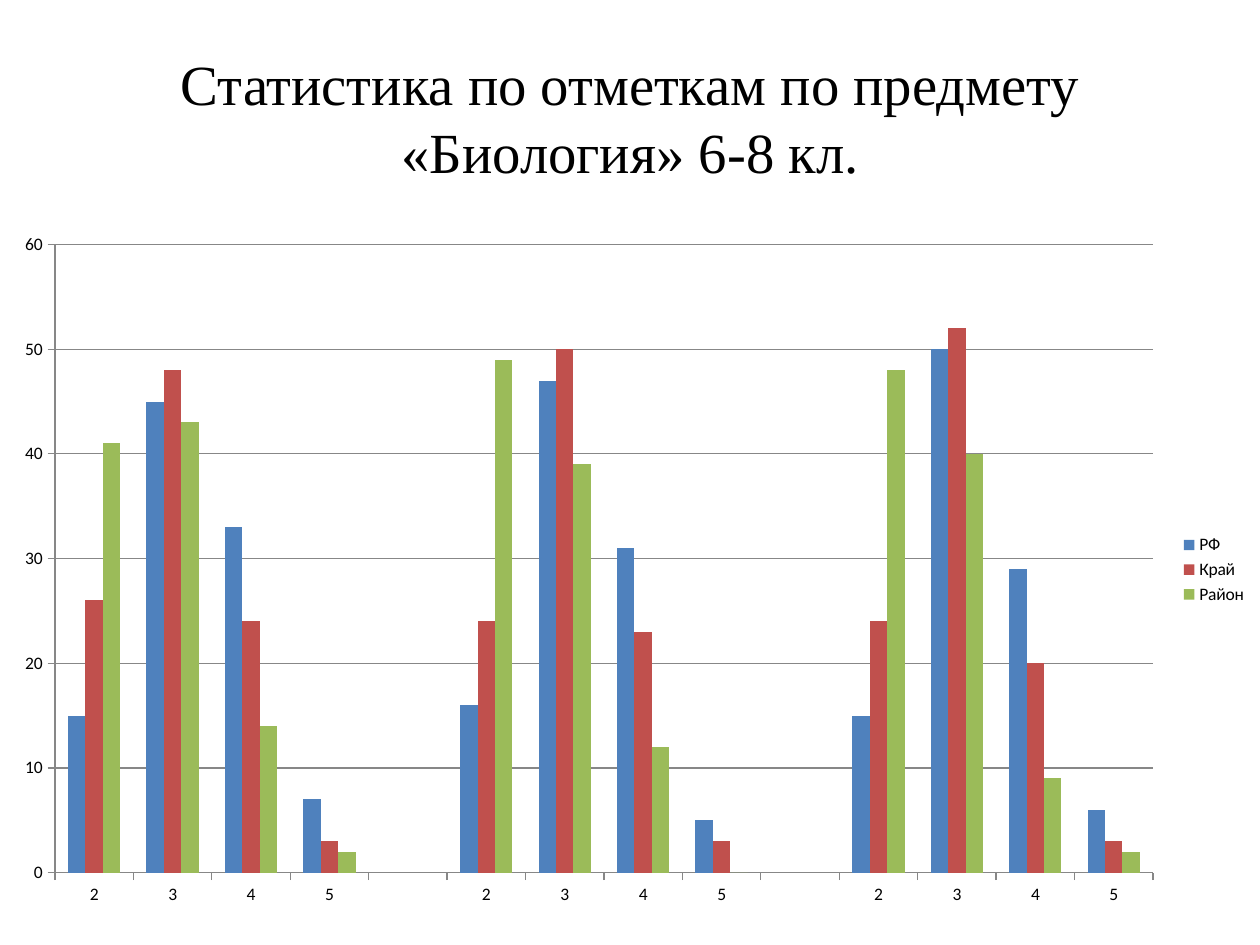
from pptx import Presentation
from pptx.chart.data import CategoryChartData
from pptx.dml.color import RGBColor
from pptx.enum.chart import XL_CHART_TYPE, XL_LEGEND_POSITION, XL_TICK_MARK
from pptx.enum.text import MSO_ANCHOR, MSO_AUTO_SIZE, PP_ALIGN
from pptx.util import Cm, Pt

BLACK = RGBColor(0x00, 0x00, 0x00)
GREY = RGBColor(0x87, 0x87, 0x87)
BLUE = RGBColor(0x4F, 0x81, 0xBD)
RED = RGBColor(0xC0, 0x50, 0x4D)
GREEN = RGBColor(0x9B, 0xBB, 0x59)

MARKS = ["2", "3", "4", "5"]
LABELS = (MARKS + [""]) * 2 + MARKS
SERIES = [
    ("РФ", BLUE, [15, 45, 33, 7, None, 16, 47, 31, 5, None, 15, 50, 29, 6]),
    ("Край", RED, [26, 48, 24, 3, None, 24, 50, 23, 3, None, 24, 52, 20, 3]),
    ("Район", GREEN, [41, 43, 14, 2, None, 49, 39, 12, 0, None, 48, 40, 9, 2]),
]


def apply(target, values):
    for name, value in values.items():
        setattr(target, name, value)


def add_title(slide, left, top, width, height):
    title = slide.shapes.title
    apply(title, {"left": left, "top": top, "width": width, "height": height})
    frame = title.text_frame
    frame.text = "Статистика по отметкам по предмету «Биология» 6-8 кл."
    apply(frame, {"word_wrap": True, "auto_size": MSO_AUTO_SIZE.NONE,
                  "vertical_anchor": MSO_ANCHOR.MIDDLE})
    line = frame.paragraphs[0]
    line.alignment = PP_ALIGN.CENTER
    font = line.runs[0].font
    apply(font, {"name": "Times New Roman", "size": Pt(32.4)})
    font.color.rgb = BLACK


def style_line(line):
    line.color.rgb = GREY
    line.width = Pt(0.75)


def add_chart(slide, left, top, width, height):
    data = CategoryChartData()
    data.categories = LABELS
    for name, color, values in SERIES:
        data.add_series(name, values)
    chart = slide.shapes.add_chart(
        XL_CHART_TYPE.COLUMN_CLUSTERED, left, top, width, height, data).chart
    apply(chart, {"has_title": False, "has_legend": True})
    apply(chart.font, {"name": "Calibri", "size": Pt(10)})
    chart.font.color.rgb = BLACK
    apply(chart.legend, {"position": XL_LEGEND_POSITION.RIGHT,
                         "include_in_layout": False})
    plot = chart.plots[0]
    apply(plot, {"gap_width": 150, "overlap": 0, "vary_by_categories": False})
    for bars, (name, color, values) in zip(plot.series, SERIES):
        bars.format.fill.solid()
        bars.format.fill.fore_color.rgb = color
    for axis in (chart.category_axis, chart.value_axis):
        apply(axis, {"major_tick_mark": XL_TICK_MARK.OUTSIDE,
                     "minor_tick_mark": XL_TICK_MARK.NONE})
        style_line(axis.format.line)
    apply(chart.value_axis, {"minimum_scale": 0, "maximum_scale": 60,
                             "major_unit": 10, "has_major_gridlines": True})
    style_line(chart.value_axis.major_gridlines.format.line)


def main():
    deck = Presentation()
    apply(deck, {"slide_width": Cm(25.4), "slide_height": Cm(19.05)})
    slide = deck.slides.add_slide(deck.slide_layouts[5])
    add_title(slide, Cm(1.27), Cm(0.76), Cm(22.86), Cm(3.18))
    add_chart(slide, Cm(0), Cm(4.45), Cm(25.4), Cm(14.07))
    deck.save("out.pptx")


if __name__ == "__main__":
    main()
